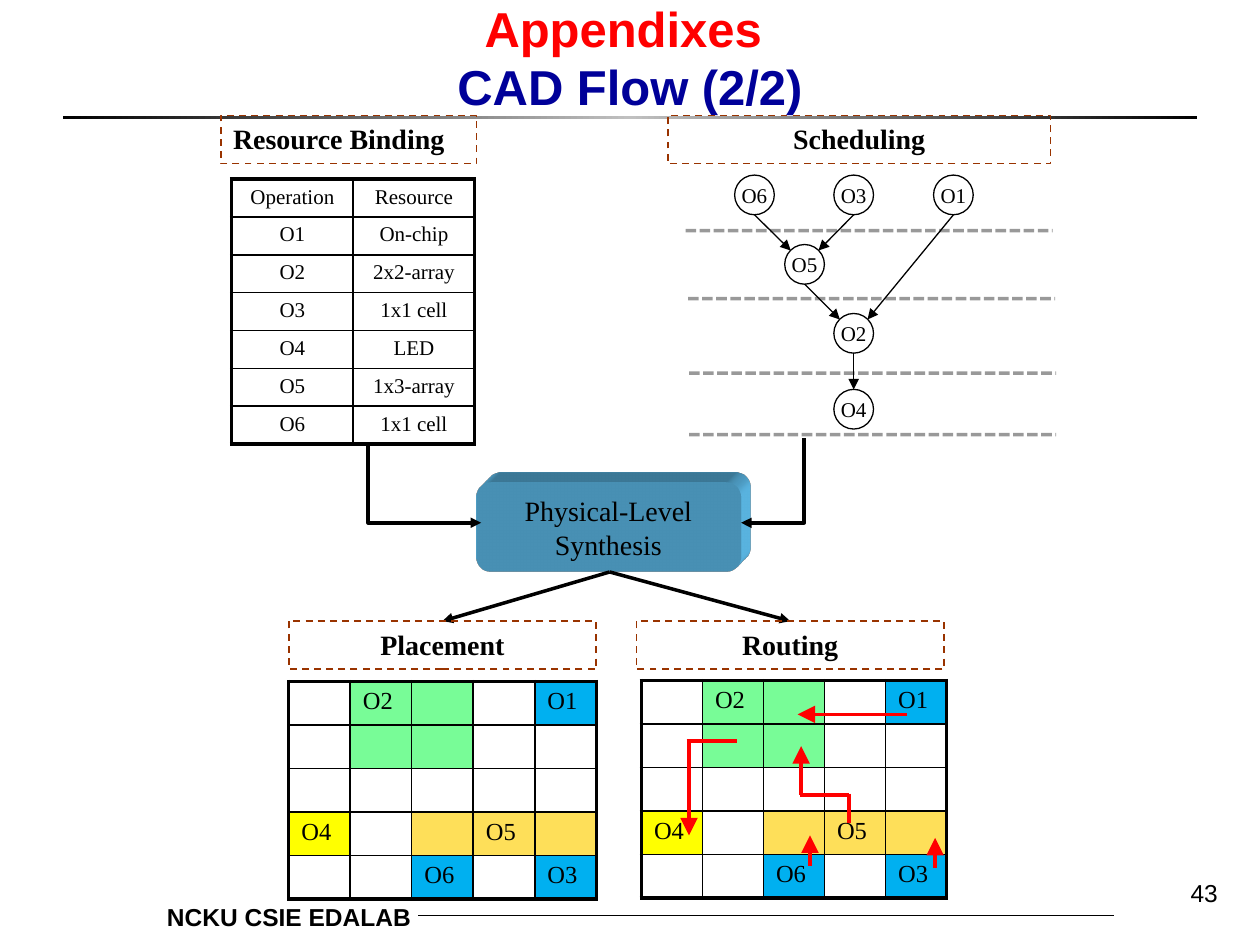
from copy import deepcopy
from dataclasses import dataclass

from lxml.etree import SubElement
from pptx import Presentation
from pptx.dml.color import RGBColor
from pptx.enum.dml import MSO_LINE_DASH_STYLE as Dash
from pptx.enum.shapes import MSO_CONNECTOR as Link, MSO_SHAPE as Shape
from pptx.enum.text import MSO_ANCHOR as Anchor, PP_ALIGN as Align
from pptx.oxml import parse_xml
from pptx.oxml.ns import nsdecls, qn
from pptx.util import Cm, Pt


@dataclass(frozen=True)
class Theme:
    sans: str = "Arial"
    serif: str = "Times New Roman"
    black: str = "000000"
    silver: str = "C0C0C0"
    white: str = "FFFFFF"
    red: str = "FF0000"
    navy: str = "000099"
    brown: str = "993300"
    sky: str = "66CCFF"
    green: str = "78FC97"
    blue: str = "00B0F0"
    yellow: str = "FFFF00"
    amber: str = "FEDF59"
    title: float = 28
    heading: float = 16
    label: float = 14
    small: float = 12
    thin: float = 0.75
    inner: float = 1
    thick: float = 2
    frame: float = 2.25


THEME = Theme()
CELL_FILLS = {"G": THEME.green, "B": THEME.blue, "Y": THEME.yellow, "A": THEME.amber}

BINDING = [("Operation", "Resource"), ("O1", "On-chip"), ("O2", "2x2-array"),
           ("O3", "1x1 cell"), ("O4", "LED"), ("O5", "1x3-array"), ("O6", "1x1 cell")]
CHIP_LABELS = [("", "O2", "", "", "O1"), ("",) * 5, ("",) * 5,
               ("O4", "", "", "O5", ""), ("", "", "O6", "", "O3")]
CHIP_FILLS = [".GG.B", ".GG..", ".....", "Y.AAA", "..B.B"]

# Circle of each operation: left, top
OPERATIONS = {"O6": (14.81, 3.53), "O3": (16.81, 3.53), "O1": (18.82, 3.53),
              "O5": (15.82, 4.93), "O2": (16.81, 6.32), "O4": (16.81, 7.85)}
CIRCLE = 0.8
# Where an edge meets its target, as shares of the circle
TOP, TOP_LEFT, TOP_RIGHT = (0.5, 0), (0.15, 0.15), (0.85, 0.15)
EDGES = [("O6", "O5", TOP_LEFT), ("O3", "O5", TOP_RIGHT), ("O5", "O2", TOP_LEFT),
         ("O1", "O2", TOP_RIGHT), ("O2", "O4", TOP)]
STEP_LINES = [(13.82, 4.65), (13.87, 6.02), (13.89, 7.52), (13.89, 8.76)]
STEP_LENGTH = 7.4

# Routes on the chip: start, end, arrowhead
ROUTES = [((16.33, 17.45), (16.33, 16.84), True), ((18.85, 17.5), (18.85, 16.89), True),
          ((18.29, 14.4), (16.08, 14.4), True), ((13.89, 14.94), (13.89, 16.84), True),
          ((16.15, 16.03), (16.15, 15.04), True), ((16.13, 16.03), (17.12, 16.03), False),
          ((17.12, 16), (17.12, 16.59), False), ((13.84, 14.94), (14.86, 14.94), False)]


def rgb(color):
    return RGBColor.from_string(color)


def assign(target, values):
    for name, value in values.items():
        setattr(target, name, value)


class Painter:
    def __init__(self, page, theme):
        self.page, self.theme = page, theme

    def fill_text(self, frame, lines, size, font, align=Align.CENTER, bold=False):
        """Fill a text frame with one paragraph per line."""
        for index, line in enumerate(lines):
            para = frame.add_paragraph() if index else frame.paragraphs[0]
            para.alignment = align
            self.span(para, line, size, font, bold)

    def span(self, para, text, size, font, bold=False, color=None):
        run = para.add_run()
        run.text = text
        assign(run.font, {"size": Pt(size), "name": font, "bold": bold})
        run.font.color.rgb = rgb(color or self.theme.black)

    def text(self, left, top, width, height, lines, align, anchor=Anchor.TOP, bold=False):
        box = self.page.shapes.add_textbox(Cm(left), Cm(top), Cm(width), Cm(height))
        assign(box.text_frame, {"word_wrap": True, "vertical_anchor": anchor})
        self.fill_text(box.text_frame, lines, self.theme.label, self.theme.sans, align, bold)
        return box.text_frame

    def shape(self, kind, left, top, width, height, fill=None, line=None, weight=1):
        shape = self.page.shapes.add_shape(kind, Cm(left), Cm(top), Cm(width), Cm(height))
        shape.shadow.inherit = False
        if fill:
            shape.fill.solid()
            shape.fill.fore_color.rgb = rgb(fill)
        else:
            shape.fill.background()
        if line:
            shape.line.color.rgb = rgb(line)
            shape.line.width = Pt(weight)
        else:
            shape.line.fill.background()
        return shape

    def gradient_bar(self, left, top, width, height, colors):
        bar = self.shape(Shape.RECTANGLE, left, top, width, height)
        bar.fill.gradient()
        bar.fill.gradient_angle = 0
        stops = bar._element.spPr.find(".//" + qn("a:gsLst"))
        stops.insert(1, deepcopy(stops[0]))
        for index, (stop, color) in enumerate(zip(bar.fill.gradient_stops, colors)):
            stop.position = index / 2
            stop.color.rgb = rgb(color)

    def heading(self, left, top, width, text, align=Align.CENTER):
        box = self.shape(Shape.RECTANGLE, left, top, width, 0.97, line=self.theme.brown)
        box.line.dash_style = Dash.DASH
        box.text_frame.vertical_anchor = Anchor.TOP
        self.fill_text(box.text_frame, [text], self.theme.heading, self.theme.serif, align, True)

    def circle(self, left, top, text):
        circle = self.shape(Shape.OVAL, left, top, CIRCLE, CIRCLE, self.theme.white,
                            self.theme.black, self.theme.thin)
        assign(circle.text_frame, {"word_wrap": False, "vertical_anchor": Anchor.MIDDLE})
        self.fill_text(circle.text_frame, [text], self.theme.small, self.theme.serif)

    def block(self, left, top, width, height, lines):
        """Rounded box extruded to the upper right."""
        block = self.shape(Shape.ROUNDED_RECTANGLE, left, top, width, height, self.theme.sky)
        assign(block.text_frame, {"word_wrap": False, "vertical_anchor": Anchor.MIDDLE})
        self.fill_text(block.text_frame, lines, self.theme.heading, self.theme.serif)
        ns = nsdecls("a")
        for xml in (f'<a:scene3d {ns}><a:camera prst="legacyObliqueTopRight"/>'
                    '<a:lightRig rig="legacyFlat3" dir="b"/></a:scene3d>',
                    f'<a:sp3d {ns} extrusionH="201600" prstMaterial="legacyMatte">'
                    f'<a:extrusionClr><a:srgbClr val="{self.theme.sky}"/></a:extrusionClr></a:sp3d>'):
            block._element.spPr.append(parse_xml(xml))

    def line(self, start, end, weight, color=None, head=None, kind=Link.STRAIGHT):
        link = self.page.shapes.add_connector(kind, *map(Cm, (*start, *end)))
        link.line.color.rgb = rgb(color or self.theme.black)
        link.line.width = Pt(weight)
        if head:
            SubElement(link.line._get_or_add_ln(), qn("a:tailEnd"), type="triangle", w=head, len=head)
        SubElement(link._element.spPr, qn("a:effectLst"))
        return link

    def elbow(self, start, end):
        """Arrow that runs down first, then sideways: a quarter-turned one-bend connector."""
        (x1, y1), (x2, y2) = start, end
        x, y, half_run, half_side = (x1 + x2) / 2, (y1 + y2) / 2, (y2 - y1) / 2, (x2 - x1) / 2
        link = self.line((x - half_run, y + half_side), (x + half_run, y - half_side),
                         self.theme.thick, head="med", kind=Link.ELBOW)
        properties = link._element.spPr
        properties.find(qn("a:xfrm")).set("rot", str(90 * 60000))
        properties.find(qn("a:prstGeom")).set("prst", "bentConnector2")

    def step_line(self, left, top):
        link = self.line((left, top), (left + STEP_LENGTH, top), self.theme.thick)
        link.line.dash_style = Dash.SQUARE_DOT
        SubElement(link._element.spPr.find(".//" + qn("a:srgbClr")), qn("a:alpha"), val="40000")

    def table(self, left, top, width, height, rows, size, align, fills=None):
        count, columns = len(rows), len(rows[0])
        frame = self.page.shapes.add_table(count, columns, Cm(left), Cm(top), Cm(width), Cm(height))
        table = frame.table
        assign(table, {"first_row": False, "horz_banding": False})
        for r, row in enumerate(rows):
            for c, text in enumerate(row):
                cell = table.cell(r, c)
                outer = {"L": c == 0, "R": c == columns - 1, "T": r == 0, "B": r == count - 1}
                for side, is_frame in outer.items():
                    self.border(cell, side, self.theme.frame if is_frame else self.theme.inner)
                color = CELL_FILLS.get(fills[r][c]) if fills else None
                if color:
                    cell.fill.solid()
                    cell.fill.fore_color.rgb = rgb(color)
                else:
                    cell.fill.background()
                if text:
                    self.fill_text(cell.text_frame, [text], size, self.theme.serif, align)
                else:
                    assign(cell, {"margin_top": 0, "margin_bottom": 0})

    def border(self, cell, side, weight):
        edge = SubElement(cell._tc.get_or_add_tcPr(), qn(f"a:ln{side}"), w=str(int(Pt(weight))))
        SubElement(SubElement(edge, qn("a:solidFill")), qn("a:srgbClr"), val=self.theme.black)


def main():
    deck = Presentation()
    assign(deck, {"slide_width": Cm(25.4), "slide_height": Cm(19.05)})
    page = deck.slides.add_slide(deck.slide_layouts[6])
    paint, theme = Painter(page, THEME), THEME

    paint.gradient_bar(1.27, 2.33, 22.86, 0.08, (theme.black, theme.silver, theme.black))
    paint.line((8.43, 18.46), (22.45, 18.46), 0.5)
    paint.text(2.39, 18.06, 6.15, 0.86, ["NCKU CSIE EDALAB"], Align.RIGHT, bold=True)
    paint.text(3.4, 17.32, 21.4, 1.09, ["43"], Align.RIGHT, Anchor.BOTTOM)
    title = paint.text(1.9, 0.13, 21.6, 2.33, [], Align.CENTER, Anchor.BOTTOM).paragraphs[0]
    title.alignment = Align.CENTER
    paint.span(title, "Appendixes ", theme.title, theme.sans, True, theme.red)
    title.add_line_break()
    paint.span(title, "CAD Flow (2/2)", theme.title, theme.sans, True, theme.navy)

    paint.heading(13.46, 2.33, 7.72, "Scheduling")
    paint.heading(4.45, 2.33, 5.16, "Resource Binding", Align.LEFT)
    paint.table(4.67, 3.61, 4.9, 5.33, BINDING, theme.small, Align.CENTER)

    paint.block(9.6, 9.73, 5.33, 1.8, ["Physical-Level", "Synthesis"])
    paint.elbow((16.21, 8.84), (14.94, 10.54))
    paint.elbow((7.42, 8.94), (9.7, 10.54))
    for x in (8.92, 15.93):
        paint.line((12.29, 11.53), (x, 12.52), theme.thick, head="med")

    chips = [("Placement", 5.82, 5.82, 13.74, 6.2), ("Routing", 12.83, 12.93, 13.72, 6.15)]
    for name, heading_left, left, top, width in chips:
        paint.heading(heading_left, 12.52, 6.2, name)
        paint.table(left, top, width, 4.38, CHIP_LABELS, theme.label, Align.LEFT, CHIP_FILLS)
    for start, end, pointed in ROUTES:
        paint.line(start, end, theme.thick, theme.red, "lg" if pointed else None)

    for name, (left, top) in OPERATIONS.items():
        paint.circle(left, top, name)
    for source, target, (across, down) in EDGES:
        (x1, y1), (x2, y2) = OPERATIONS[source], OPERATIONS[target]
        paint.line((x1 + CIRCLE / 2, y1 + CIRCLE),
                   (x2 + across * CIRCLE, y2 + down * CIRCLE), theme.thin, head="med")
    for left, top in STEP_LINES:
        paint.step_line(left, top)

    deck.save("out.pptx")


if __name__ == "__main__":
    main()
